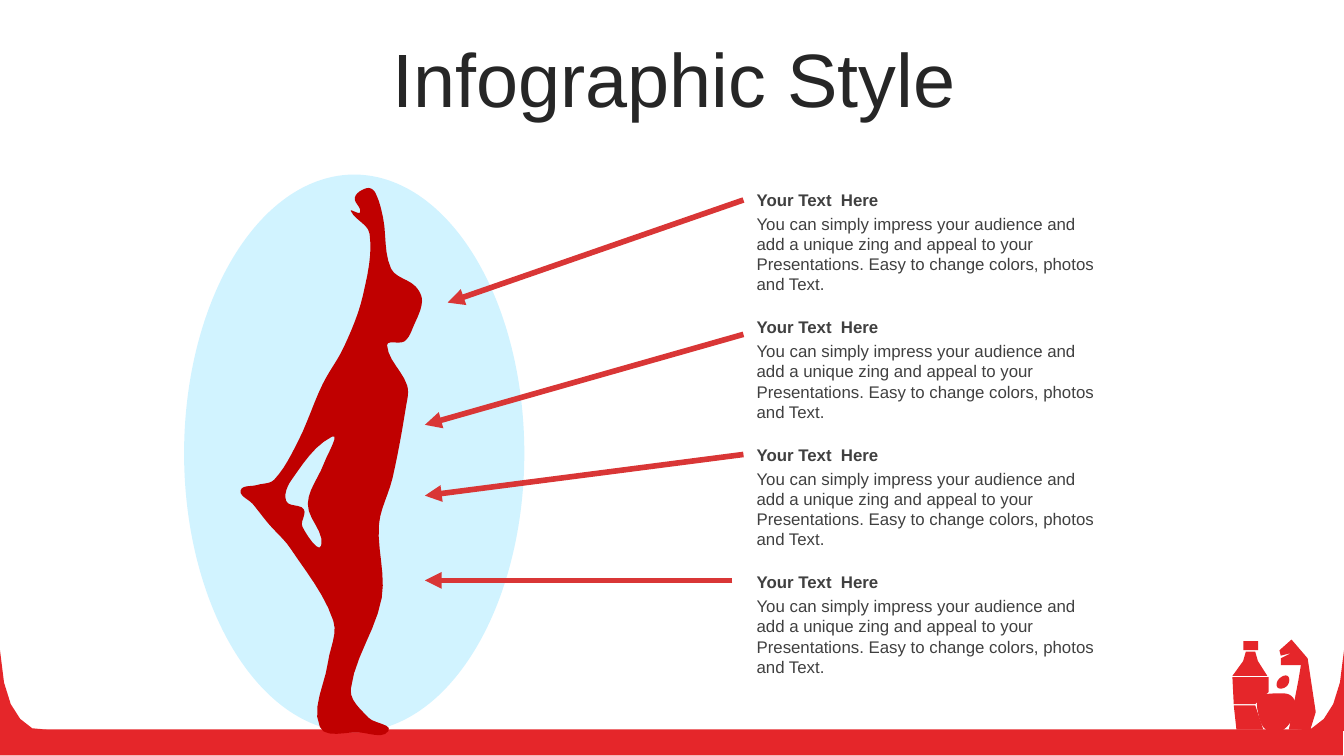
import math

import lxml.etree
import pptx
import pptx.dml.color
import pptx.enum.shapes
import pptx.enum.text
import pptx.oxml.ns
import pptx.util
from dataclasses import dataclass
from pptx.util import Cm


@dataclass(frozen=True)
class Theme:
    font: str = "Arial"
    title_size: float = 40.5
    text_size: float = 9
    title: str = "262626"
    text: str = "404040"
    band: str = "E5262A"
    oval: str = "D1F3FF"
    figure: str = "C00000"
    arrow: str = "D93636"


theme = Theme()
rgb = pptx.dml.color.RGBColor.from_string
UNIT = Cm(0.0254)  # outline coordinates are hundredths of an inch
CURVE_STEPS = 6

deck = pptx.Presentation()
deck.slide_width, deck.slide_height = Cm(25.4), Cm(14.29)
slide = deck.slides.add_slide(deck.slide_layouts[6])


def draw_outline(contours, colour, smooth=False):
    """Fill closed contours of x, y points, optionally rounding them through every point."""
    builder = None
    for numbers in contours:
        points = list(zip(numbers[::2], numbers[1::2]))
        if smooth:
            anchors, points = points, []
            for i, b in enumerate(anchors):
                a, c, d = (anchors[(i + k) % len(anchors)] for k in (-1, 1, 2))
                reach = math.dist(b, c) / 3
                leave, arrive = reach / math.dist(a, c), reach / math.dist(b, d)
                for step in range(CURVE_STEPS):
                    t = step / CURVE_STEPS
                    u = 1 - t
                    points.append(tuple(
                        u ** 3 * b[k] + 3 * t * u * u * (b[k] + leave * (c[k] - a[k]))
                        + 3 * t * t * u * (c[k] - arrive * (d[k] - b[k])) + t ** 3 * c[k]
                        for k in (0, 1)))
        points = [(x * UNIT, y * UNIT) for x, y in points]
        if builder is None:
            builder = slide.shapes.build_freeform(*points[0])
        else:
            builder.move_to(*points[0])
        builder.add_line_segments(points[1:], close=True)
    outline = builder.convert_to_shape()
    outline.shadow.inherit = False
    outline.fill.solid()
    outline.fill.fore_color.rgb = rgb(colour)
    outline.line.fill.background()


def write_text(text, left, top, width, height, size, colour, bold=False):
    box = slide.shapes.add_textbox(Cm(left), Cm(top), Cm(width), Cm(height))
    frame = box.text_frame
    frame.word_wrap = True
    frame.text = text
    font = frame.paragraphs[0].runs[0].font
    font.name, font.size, font.bold = theme.font, pptx.util.Pt(size), bold
    font.color.rgb = rgb(colour)
    return frame


# Bottom band, bottle cap, and the oval behind the figure
PRESET = pptx.enum.shapes.MSO_SHAPE
for preset, left, top, width, height, colour in (
        (PRESET.RECTANGLE, 0, 13.79, 25.38, 0.49, theme.band),
        (PRESET.RECTANGLE, 23.5, 12.12, 0.28, 0.17, theme.band),
        (PRESET.OVAL, 3.48, 3.3, 6.43, 10.54, theme.oval)):
    backdrop = slide.shapes.add_shape(preset, Cm(left), Cm(top), Cm(width), Cm(height))
    backdrop.shadow.inherit = False
    backdrop.fill.solid()
    backdrop.fill.fore_color.rgb = rgb(colour)
    backdrop.line.fill.background()

# Upswept ends of the band, mirrored
left_sweep = [0, 484, 3, 508, 8, 524, 15, 535, 24, 542, 35, 543, 0, 544]
right_sweep = [1000 - n if i % 2 == 0 else n for i, n in enumerate(left_sweep)]
for sweep in (left_sweep, right_sweep):
    draw_outline([sweep], theme.band)

# Fitness emblem
arm = [959, 543, 966, 507, 968, 495, 953, 495, 953, 490, 961, 486, 953, 488, 952, 484,
       961, 476, 973, 490, 979, 530, 975, 543]
bottle_neck = [927, 485, 934, 485, 936, 492, 943, 503, 917, 503, 925, 492]
bottle_label = [917, 504, 944, 504, 944, 515, 934, 524, 918, 524]
bottle_base = [918, 525, 934, 525, 940, 543, 920, 543]
for part in (arm, bottle_neck, bottle_label, bottle_base):
    draw_outline([part], theme.band)
apple = [950, 516, 961, 518, 964, 528, 955, 543, 942, 543, 936, 530, 937, 519]
leaf = [951, 512, 951, 506, 958, 503, 958, 510]
for part in (apple, leaf):
    draw_outline([part], theme.band, smooth=True)

# Title
title = write_text("Infographic Style", 0.69, 0.71, 24.1, 1.5, theme.title_size, theme.title)
title.vertical_anchor = pptx.enum.text.MSO_ANCHOR.MIDDLE
title.paragraphs[0].alignment = pptx.enum.text.PP_ALIGN.CENTER

# Four notes at an even pitch
NOTE = ("You can simply impress your audience and add a unique zing and appeal to your "
        "Presentations. Easy to change colors, photos and Text.")
for row in range(4):
    top = 3.46 + 2.41 * row
    for text, offset, height, bold in (("Your Text  Here", 0, 0.63, True),
                                       (NOTE, 0.45, 1.8, False)):
        note = write_text(text, 14.05, top + offset, 7.09, height, theme.text_size, theme.text, bold)
        note.auto_size = pptx.enum.text.MSO_AUTO_SIZE.SHAPE_TO_FIT_TEXT

# Stretching figure, with the gap between arm and leg
body = [179, 365, 191, 361, 204, 357, 222, 328, 240, 286, 256, 258, 270, 220, 275, 174,
        261, 157, 268, 158, 264, 147, 273, 140, 279, 143, 285, 162, 291, 200, 309, 213,
        314, 224, 308, 242, 301, 254, 288, 257, 303, 287, 302, 303, 292, 356, 282, 390,
        284, 445, 261, 513, 274, 534, 289, 544, 267, 545, 238, 541, 244, 493, 248, 462,
        216, 408, 200, 390, 188, 375]
arm_gap = [247, 325, 217, 357, 213, 373, 226, 379, 225, 392, 239, 406, 229, 375, 241, 345]
draw_outline([body, arm_gap], theme.figure, smooth=True)

# Arrows from the notes to the figure
for start_x, start_y, end_x, end_y in ((14.05, 3.78, 8.46, 5.72), (14.05, 6.32, 8.03, 8.03),
                                       (14.05, 8.59, 8.03, 9.37), (13.84, 10.97, 8.03, 10.97)):
    arrow = slide.shapes.add_connector(pptx.enum.shapes.MSO_CONNECTOR.STRAIGHT,
                                       Cm(start_x), Cm(start_y), Cm(end_x), Cm(end_y))
    arrow.line.color.rgb = rgb(theme.arrow)
    arrow.line.width = pptx.util.Pt(3)
    properties = arrow._element.spPr
    stroke = properties.find(pptx.oxml.ns.qn("a:ln"))
    lxml.etree.SubElement(stroke, pptx.oxml.ns.qn("a:tailEnd"), type="triangle")
    lxml.etree.SubElement(properties, pptx.oxml.ns.qn("a:effectLst"))

deck.save("out.pptx")
